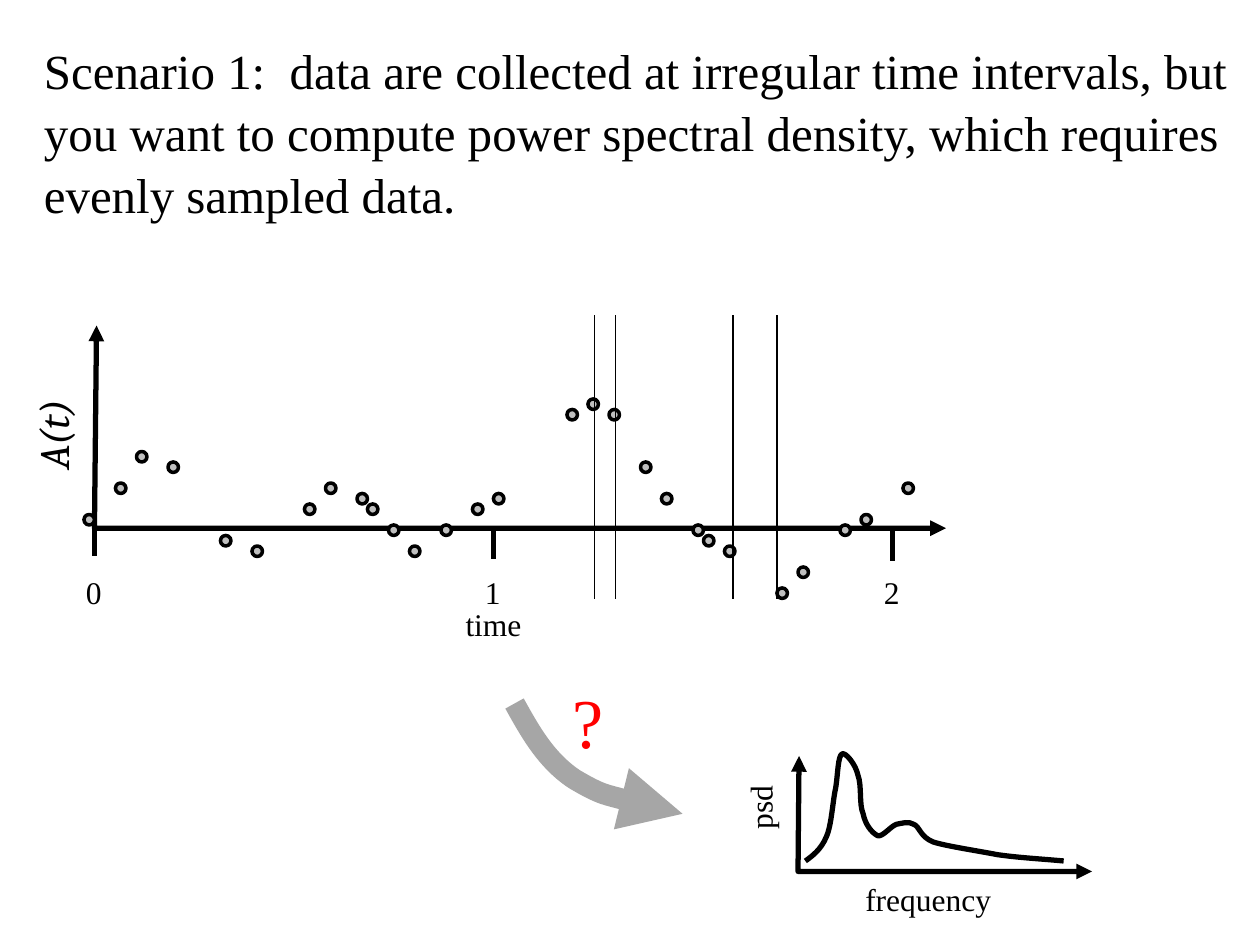
from lxml import etree
from pptx import Presentation
from pptx.dml.color import RGBColor
from pptx.enum.shapes import MSO_CONNECTOR, MSO_SHAPE
from pptx.enum.text import MSO_AUTO_SIZE, PP_ALIGN
from pptx.oxml.ns import qn
from pptx.util import Inches, Pt

STRAIGHT = MSO_CONNECTOR.STRAIGHT
OVAL = MSO_SHAPE.OVAL
FIT_TEXT = MSO_AUTO_SIZE.SHAPE_TO_FIT_TEXT
LEFT, CENTER = PP_ALIGN.LEFT, PP_ALIGN.CENTER

COLORS = {"ink": "000000", "dot": "BFBFBF", "arrow": "A6A6A6", "question": "FF0000"}
SERIF, MATH = "Times New Roman", "Cambria"
WIDTH, HEIGHT = 10, 7.5
COLUMNS = 120
CELL = WIDTH / COLUMNS

TITLE = (
    "Scenario 1:  data are collected at irregular time intervals, but you want to "
    "compute power spectral density, which requires evenly sampled data."
)
TIME_TICKS = ["0", "1", "2"]
TICK_START, TICK_STEP = 9, 38
SAMPLES = [
    (11, 46), (13, 43), (16, 44), (21, 51), (24, 52), (31, 46), (29, 48),
    (34, 47), (35, 48), (37, 50), (39, 52), (42, 50), (47, 47), (45, 48),
    (54, 39), (56, 38), (58, 39), (61, 44), (63, 47), (66, 50), (67, 51),
    (69, 52), (76, 54), (74, 56), (80, 50), (8, 49), (82, 49), (86, 46),
]
INTERVAL_MARKS = [56.6, 58.6, 69.8, 74]
TIME_AXES = [(9.2, 31), (9, 50.3), (90.1, 50.3)]
FREQUENCY_AXES = [(76.1, 72), (76, 83), (104, 83)]
SPECTRUM = [
    (76.7, 82),
    (77.4, 81.5), (78.2, 80.9), (78.7, 79.7),
    (79.2, 78.6), (79.3, 76.3), (79.6, 75),
    (79.8, 73.7), (79.8, 72), (80.2, 71.8),
    (80.5, 71.6), (81.5, 72.8), (81.7, 73.8),
    (82.1, 74.8), (81.8, 76.6), (82.2, 77.5),
    (82.4, 78.5), (83, 79.3), (83.6, 79.6),
    (84.1, 79.7), (84.8, 78.7), (85.4, 78.5),
    (86, 78.4), (86.5, 78.2), (87, 78.5),
    (87.6, 78.7), (87.6, 79.7), (88.9, 80.2),
    (90.2, 80.6), (92.9, 81), (95, 81.4),
    (97.1, 81.7), (99.1, 81.8), (101.3, 82),
]
QUESTION_ARROW = [
    (49, 67),
    (50.5, 69.7), (52, 72.4), (54.7, 74.2),
    (57.4, 75.8), (61.2, 76.7), (65, 77.5),
]


def cells(*values):
    return [Inches(value * CELL) for value in values]


def color(name):
    return RGBColor.from_string(COLORS[name])


def set_line(shape, width, name="ink"):
    shape.line.color.rgb = color(name)
    shape.line.width = Pt(width)


def add_text(slide, text, box, size=18, font=SERIF, name="ink", align=LEFT,
             rotation=0, italic=False, spacing=None):
    shape = slide.shapes.add_textbox(*cells(*box))
    shape.rotation = rotation
    frame = shape.text_frame
    frame.word_wrap = True
    frame.auto_size = FIT_TEXT
    paragraph = frame.paragraphs[0]
    paragraph.alignment = align
    paragraph.line_spacing = spacing
    run = paragraph.add_run()
    run.text = text
    run.font.name = font
    run.font.size = Pt(size)
    run.font.italic = italic
    run.font.color.rgb = color(name)


def add_line(slide, start, end, width):
    connector = slide.shapes.add_connector(STRAIGHT, *cells(*start, *end))
    set_line(connector, width)
    etree.SubElement(connector._element.spPr, qn("a:effectLst"))


def add_outline(slide, points, width=3, name="ink", ends=(), curved=False):
    start, *rest = [cells(*point) for point in points]
    builder = slide.shapes.build_freeform(*start)
    builder.add_line_segments(rest, close=False)
    shape = builder.convert_to_shape()
    shape.shadow.inherit = False
    shape.fill.background()
    set_line(shape, width, name)
    line = shape._element.spPr.find(qn("a:ln"))
    for end in ends:
        etree.SubElement(line, qn(f"a:{end}"), type="triangle")
    if curved:
        bend_segments(shape)


def bend_segments(shape):
    outline = shape._element.find(".//" + qn("a:path"))
    segments = outline.findall(qn("a:lnTo"))
    for first in range(0, len(segments), 3):
        curve = etree.SubElement(outline, qn("a:cubicBezTo"))
        for segment in segments[first:first + 3]:
            curve.append(segment[0])
            outline.remove(segment)


def add_time_plot(slide):
    add_outline(slide, TIME_AXES, ends=("headEnd", "tailEnd"))
    for index, label in enumerate(TIME_TICKS):
        x, top = TICK_START + index * TICK_STEP, 50 + 0.2 * index
        add_line(slide, (x, top), (x, top + 3), 3)
        add_text(slide, label, (x - 2, 54, 5, 5))
    add_text(slide, "time", (39, 57, 16, 4.8), align=CENTER)
    add_text(slide, "A(t)", (-0.5, 37.4, 11, 6), 24, MATH, rotation=270, italic=True)
    for column, row in SAMPLES:
        dot = slide.shapes.add_shape(OVAL, *cells(column, row, 1, 1))
        dot.shadow.inherit = False
        dot.fill.solid()
        dot.fill.fore_color.rgb = color("dot")
        set_line(dot, 2)
    for x in INTERVAL_MARKS:
        add_line(slide, (x, 30), (x, 57), 0.75)


def add_spectrum_plot(slide):
    add_outline(slide, FREQUENCY_AXES, ends=("headEnd", "tailEnd"))
    add_outline(slide, SPECTRUM, curved=True)
    add_text(slide, "frequency", (80.4, 83.2, 16, 4.8), align=CENTER)
    add_text(slide, "psd", (64.4, 74.5, 16, 4.8), align=CENTER, rotation=270)


def main():
    presentation = Presentation()
    presentation.slide_width = Inches(WIDTH)
    presentation.slide_height = Inches(HEIGHT)
    slide = presentation.slides.add_slide(presentation.slide_layouts[6])
    add_time_plot(slide)
    add_text(slide, TITLE, (3, 3, 117, 18.1), 28, spacing=1.05)
    add_spectrum_plot(slide)
    add_outline(slide, QUESTION_ARROW, 12, "arrow", ("tailEnd",), curved=True)
    add_text(slide, "?", (52, 64, 8, 9.2), 40, name="question", align=CENTER)
    presentation.save("out.pptx")


if __name__ == "__main__":
    main()
